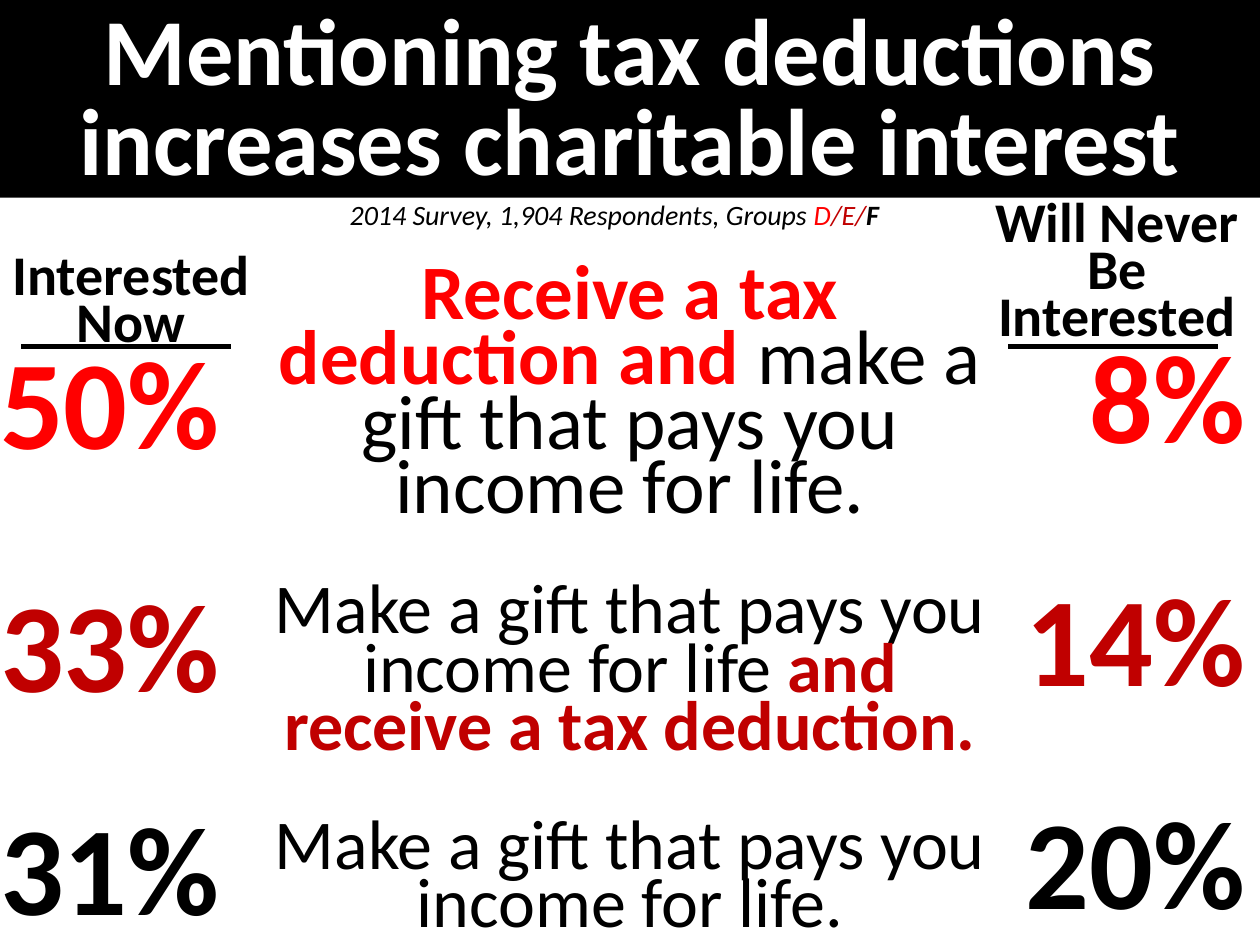
from dataclasses import dataclass

from lxml import etree
from pptx import Presentation
from pptx.dml.color import RGBColor
from pptx.enum.shapes import MSO_CONNECTOR, MSO_SHAPE
from pptx.enum.text import MSO_ANCHOR, PP_ALIGN
from pptx.oxml.ns import qn
from pptx.util import Inches, Pt

LEFT, CENTER, RIGHT = PP_ALIGN.LEFT, PP_ALIGN.CENTER, PP_ALIGN.RIGHT
TOP = MSO_ANCHOR.TOP
RECTANGLE = MSO_SHAPE.RECTANGLE
STRAIGHT = MSO_CONNECTOR.STRAIGHT


@dataclass(frozen=True)
class Theme:
    font: str = "Calibri"
    black: str = "000000"
    white: str = "FFFFFF"
    red: str = "FF0000"
    dark_red: str = "C00000"
    title: int = 54
    percent: int = 72
    lead: int = 44
    body: int = 40
    heading: int = 32
    note: int = 16
    rule: int = 3


THEME = Theme()
ROW_COLORS = (THEME.red, THEME.dark_red, THEME.black)
PERCENT_GAPS = (0, 70, 58.5)
OPTION_GAP = 34


def add_run(p, text, size, color=THEME.black, bold=False, italic=False):
    r = p.add_run()
    r.text = text
    font = r.font
    font.name, font.size = THEME.font, Pt(size)
    font.bold, font.italic = bold, italic
    font.color.rgb = RGBColor.from_string(color)


def add_paragraph(tf, runs, align=CENTER, spacing=0.7, before=0):
    """Add a paragraph of (text, format) runs, using the empty first one if free."""
    first = tf.paragraphs[0]
    p = tf.add_paragraph() if first.runs else first
    p.alignment, p.line_spacing = align, spacing
    p.space_before = Pt(before)
    for text, style in runs:
        add_run(p, text, **style)


def setup_frame(sp, insets):
    tf = sp.text_frame
    tf.word_wrap = True
    tf.vertical_anchor = TOP
    tf.margin_left, tf.margin_top, tf.margin_right, tf.margin_bottom = map(Inches, insets)
    return tf


def add_text_box(s, box, insets=(0.1, 0.05, 0.1, 0.05)):
    return setup_frame(s.shapes.add_textbox(*map(Inches, box)), insets)


def add_title(s, text):
    sp = s.shapes.add_shape(RECTANGLE, *map(Inches, (0, 0, 10, 1.57)))
    sp.shadow.inherit = False
    sp.fill.solid()
    sp.fill.fore_color.rgb = RGBColor.from_string(THEME.black)
    sp.line.fill.background()
    tf = setup_frame(sp, (0.1, 0.1, 0.1, 0))
    style = dict(size=THEME.title, color=THEME.white, bold=True)
    add_paragraph(tf, [(text, style)], spacing=0.8)


def add_percent_column(tf, heading, percents, align):
    add_paragraph(tf, [(heading, dict(size=THEME.heading, bold=True))])
    for text, color, gap in zip(percents, ROW_COLORS, PERCENT_GAPS):
        style = dict(size=THEME.percent, color=color, bold=True)
        add_paragraph(tf, [(text, style)], align, 0.8, gap)


def add_rule(s, left, right, y=2.75):
    line = s.shapes.add_connector(STRAIGHT, *map(Inches, (left, y, right, y)))
    line.line.color.rgb = RGBColor.from_string(THEME.black)
    line.line.width = Pt(THEME.rule)
    etree.SubElement(line._element.spPr, qn("a:effectLst"))


def add_note(s):
    tf = add_text_box(s, (2.25, 1.55, 5.25, 0.45), (0.1, 0.1, 0.1, 0.1))
    style = dict(size=THEME.note, italic=True)
    add_paragraph(tf, [
        ("2014 Survey, 1,904 Respondents, Groups ", style),
        ("D", dict(style, color=THEME.red)),
        ("/E/", dict(style, color=THEME.dark_red)),
        ("F", dict(style, bold=True)),
    ])


def add_options(s):
    tf = add_text_box(s, (2, 2.08, 6, 5.94))
    body = dict(size=THEME.body)
    lead = dict(size=THEME.lead)
    add_paragraph(tf, [
        ("Receive a tax deduction and ", dict(lead, color=THEME.red, bold=True)),
        ("make a gift that pays you income for life.", lead),
    ])
    add_paragraph(tf, [
        ("Make a gift that pays you income for life ", body),
        ("and receive a tax deduction.", dict(body, color=THEME.dark_red, bold=True)),
    ], before=OPTION_GAP)
    add_paragraph(tf, [("Make a gift that pays you income for life.", body)],
                  before=OPTION_GAP)


def main():
    prs = Presentation()
    prs.slide_width, prs.slide_height = Inches(10), Inches(7.5)
    s = prs.slides.add_slide(prs.slide_layouts[6])

    interested = add_text_box(s, (0, 2, 2.08, 5.62), (0, 0.05, 0, 0.05))
    add_percent_column(interested, "Interested Now", ("50%", "33%", "31%"), LEFT)
    never = add_text_box(s, (7.75, 1.58, 2.23, 5.93))
    add_percent_column(never, "Will Never Be Interested", ("8%", "14%", "20%"), RIGHT)

    add_note(s)
    add_rule(s, 8, 9.67)
    add_rule(s, 0.17, 1.83)
    add_options(s)
    add_title(s, "Mentioning tax deductions increases charitable interest")
    prs.save("out.pptx")


if __name__ == "__main__":
    main()
